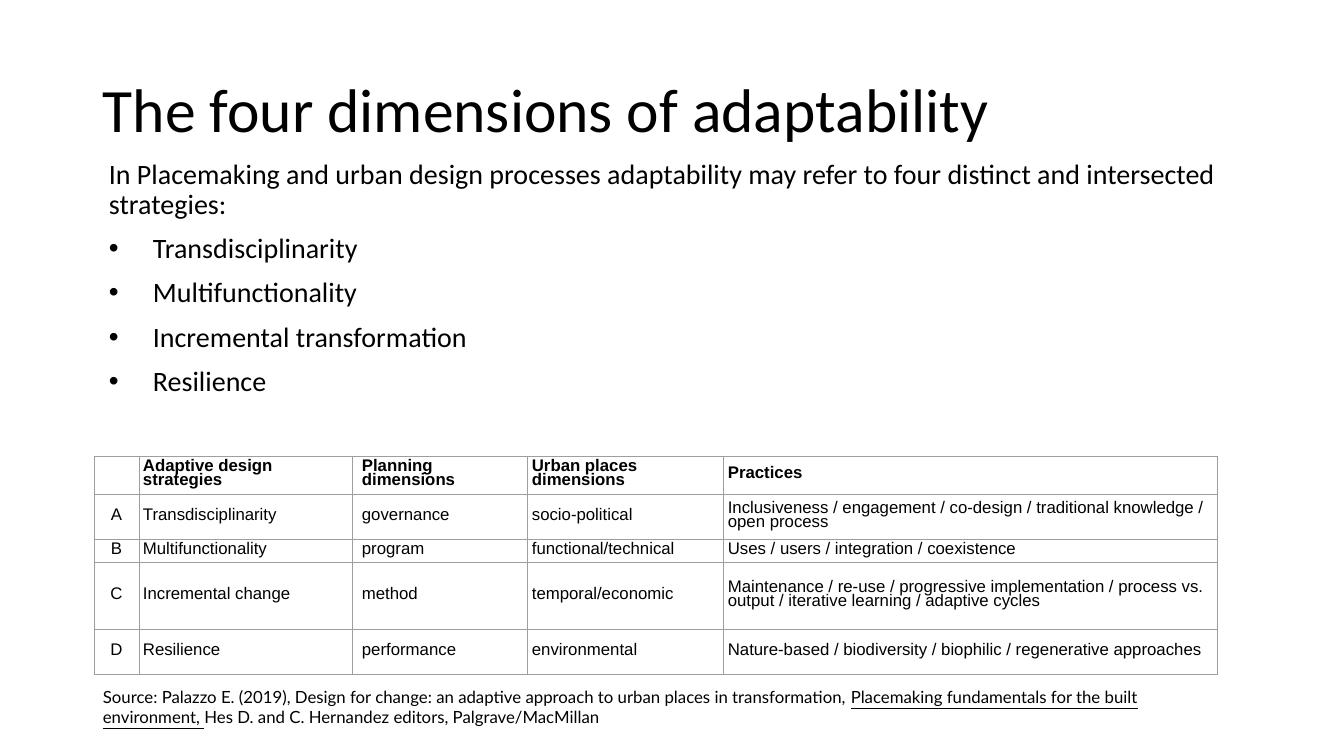
from lxml import etree
from pptx import Presentation
from pptx import util as u
from pptx.dml.color import RGBColor
from pptx.enum import text
from pptx.oxml import ns

PX = 914400 / 100.8  # EMU in one px

THEME = {
    "ink": RGBColor.from_string("000000"),
    "rule": "9E9E9E",
    "title": {"name": "Calibri", "size": u.Pt(44)},
    "body": {"name": "Calibri", "size": u.Pt(20)},
    "cell": {"name": "Arial", "size": u.Pt(12)},
    "source": {"name": "Lato", "size": u.Pt(12)},
}


def px(length):
    return u.Emu(round(length * PX))


def write(para, words, style, para_format=None, **font_format):
    """Append one run to a paragraph and set the format of both."""
    for name, value in (para_format or {}).items():
        setattr(para, name, value)
    span = para.add_run()
    span.text = words
    for name, value in {**THEME[style], **font_format}.items():
        setattr(span.font, name, value)
    span.font.color.rgb = THEME["ink"]


deck = Presentation()
deck.slide_width, deck.slide_height = px(1344), px(756)
page = deck.slides.add_slide(deck.slide_layouts[6])

# Text boxes
frames = {}
for part, place in {
    "title": (93, 40, 1159, 146),
    "body": (93, 155, 1159, 256),
    "source": (93, 682, 1138, 50),
}.items():
    box = page.shapes.add_textbox(*map(px, place))
    frames[part] = box.text_frame
    frames[part].word_wrap = True

# Title
frames["title"].vertical_anchor = text.MSO_ANCHOR.MIDDLE
write(frames["title"].paragraphs[0], "The four dimensions of adaptability",
      "title", {"line_spacing": 0.9})

# Introduction and bulleted strategies
intro = frames["body"].paragraphs[0]
intro._p.get_or_add_pPr().set("marL", str(px(6)))
write(intro, "In Placemaking and urban design processes adaptability may refer to "
      "four distinct and intersected strategies:", "body", {"line_spacing": 0.9})

for strategy in ("Transdisciplinarity", "Multifunctionality",
                 "Incremental transformation", "Resilience"):
    para = frames["body"].add_paragraph()
    props = para._p.get_or_add_pPr()
    props.set("marL", str(px(50)))
    props.set("indent", str(px(-44)))
    bullet_font = etree.SubElement(props, ns.qn("a:buFont"))
    bullet_font.set("typeface", "Arial")
    etree.SubElement(props, ns.qn("a:buChar")).set("char", "•")
    write(para, strategy, "body", {"line_spacing": 0.9, "space_before": u.Pt(10)})

# Table of strategies, dimensions and practices
rows = [
    ("", "Adaptive design strategies", "Planning dimensions",
     "Urban places dimensions", "Practices"),
    ("A", "Transdisciplinarity", "governance", "socio-political",
     "Inclusiveness / engagement / co-design / traditional knowledge / open process"),
    ("B", "Multifunctionality", "program", "functional/technical",
     "Uses / users / integration / coexistence"),
    ("C", "Incremental change", "method", "temporal/economic",
     "Maintenance / re-use / progressive implementation / process vs. output / "
     "iterative learning / adaptive cycles"),
    ("D", "Resilience", "performance", "environmental",
     "Nature-based / biodiversity / biophilic / regenerative approaches"),
]
widths = [45, 214, 175, 196, 494]
heights = [36, 45, 23, 67, 45]
LETTER, PLANNING = 0, 2  # columns with their own alignment or indent

table = page.shapes.add_table(len(rows), len(widths), px(94), px(456),
                              px(sum(widths)), px(sum(heights))).table
table.first_row = table.horz_banding = False
for column, width in zip(table.columns, widths):
    column.width = px(width)
for row, height in zip(table.rows, heights):
    row.height = px(height)

cell_format = {"vertical_anchor": text.MSO_ANCHOR.MIDDLE}
for side in ("left", "right", "top", "bottom"):
    cell_format[f"margin_{side}"] = px(4)

for r, entries in enumerate(rows):
    for c, entry in enumerate(entries):
        cell = table.cell(r, c)
        for name, value in cell_format.items():
            setattr(cell, name, value)
        for edge in ("lnL", "lnR", "lnT", "lnB"):
            line = etree.SubElement(cell._tc.get_or_add_tcPr(), ns.qn(f"a:{edge}"))
            line.set("w", str(u.Pt(0.75)))
            fill = etree.SubElement(line, ns.qn("a:solidFill"))
            etree.SubElement(fill, ns.qn("a:srgbClr")).set("val", THEME["rule"])
        cell.fill.background()

        para = cell.text_frame.paragraphs[0]
        para.line_spacing = u.Pt(10)
        if c == LETTER:
            para.alignment = text.PP_ALIGN.CENTER
        if c == PLANNING:
            para._p.get_or_add_pPr().set("marL", str(px(5)))
        if entry:
            write(para, entry, "cell", bold=r == 0)

# Source line
for words, underlined in (
    ("Source: Palazzo E. (2019), Design for change: an adaptive approach to "
     "urban places in transformation, ", False),
    ("Placemaking fundamentals for the built environment, ", True),
    ("Hes D. and C. Hernandez editors, Palgrave/MacMillan", False),
):
    write(frames["source"].paragraphs[0], words, "source", underline=underlined)

deck.save("out.pptx")
